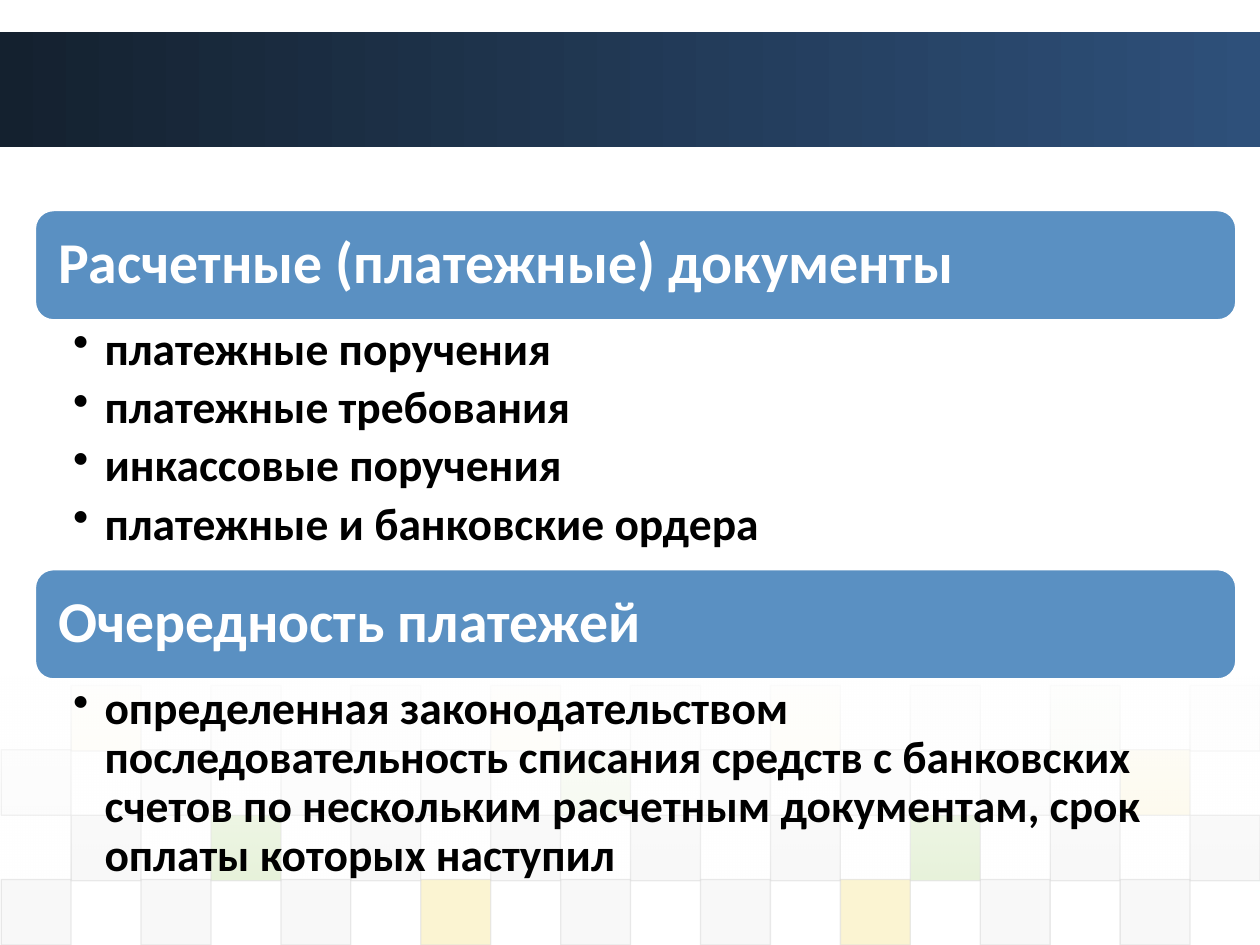
"""Build the slide on payment documents and the order of payments."""
from dataclasses import dataclass

from lxml import etree
from pptx import Presentation
from pptx.enum import shapes, text
from pptx.dml.color import RGBColor
from pptx.oxml import ns
from pptx.util import Inches, Pt

COLORS = {
    "navy": "14212F", "blue": "2E507A", "heading": "5A90C2",
    "white": "FFFFFF", "black": "000000",
    "gray": "DDDDDD", "pale": "EAEAEA", "green": "8AC246", "yellow": "EFC821",
}
TILE_CODES = {"D": "gray", "E": "pale", "G": "green", "Y": "yellow"}
FONT = "Calibri"
LEFT, WIDTH, HEADING_HEIGHT = 0.28, 9.53, 0.87
TILE_LEFT, TILE_PITCH = 0.01, 0.555


@dataclass
class TileRow:
    top: float
    first_column: int
    opacity: int
    codes: str


@dataclass
class Section:
    top: float
    body_height: float
    heading: str
    items: list[str]


@dataclass
class Stop:
    color: str
    opacity: int = 100


TILE_ROWS = [
    TileRow(5.44, 1, 5, "YEEYDYEGE"),
    TileRow(5.95, 0, 10, "DDDDGDDDY"),
    TileRow(6.47, 1, 20, "DGDDDDGDD"),
    TileRow(6.98, 0, 20, "DDDYDDYDD"),
]
SECTIONS = [
    Section(1.67, 1.98, "Расчетные (платежные) документы", [
        "платежные поручения",
        "платежные требования",
        "инкассовые поручения",
        "платежные и банковские ордера",
    ]),
    Section(4.52, 1.31, "Очередность платежей", [
        "определенная законодательством последовательность списания средств "
        "с банковских счетов по нескольким расчетным документам, "
        "срок оплаты которых наступил",
    ]),
]


def rgb(name: str) -> RGBColor:
    return RGBColor.from_string(COLORS[name])


def set_opacity(element, percent: int) -> None:
    for color in element.iter(ns.qn("a:srgbClr")):
        etree.SubElement(color, ns.qn("a:alpha"), val=str(percent * 1000))


def add_block(page, left: float, top: float, width: float, height: float,
              kind=shapes.MSO_SHAPE.RECTANGLE):
    box = page.shapes.add_shape(kind, Inches(left), Inches(top), Inches(width), Inches(height))
    box.shadow.inherit = False
    return box


def add_gradient(page, top: float, height: float, angle: int, stops: list[Stop]) -> None:
    box = add_block(page, 0, top, 10, height)
    box.line.fill.background()
    box.fill.gradient()
    box.fill.gradient_angle = angle
    for target, stop in zip(box.fill.gradient_stops, stops):
        target.color.rgb = rgb(stop.color)
        target.position = float(stops.index(stop))
    elements = box.element.spPr.iter(ns.qn("a:gs"))
    for element, stop in zip(elements, stops):
        set_opacity(element, stop.opacity)


def add_tiles(page, row: TileRow) -> None:
    for index, code in enumerate(row.codes):
        column = row.first_column + 2 * index
        tile = add_block(page, TILE_LEFT + TILE_PITCH * column, row.top, TILE_PITCH, 0.52)
        tile.fill.solid()
        tile.fill.fore_color.rgb = rgb(TILE_CODES[code])
        set_opacity(tile.element.spPr.find(ns.qn("a:solidFill")), row.opacity)
        tile.line.color.rgb = rgb("gray")
        tile.line.width = Pt(0.75)
        set_opacity(tile.element.spPr.find(ns.qn("a:ln")), 60)


def set_frame(frame, left: float, right: float, vertical: float, anchor) -> None:
    frame.word_wrap = True
    frame.margin_left, frame.margin_right = Inches(left), Inches(right)
    frame.margin_top = frame.margin_bottom = Inches(vertical)
    frame.vertical_anchor = anchor


def add_span(para, words: str, size: float, color: str) -> None:
    para.alignment = text.PP_ALIGN.LEFT
    para.line_spacing = 0.9
    span = para.add_run()
    span.text = words
    span.font.name, span.font.size, span.font.bold = FONT, Pt(size), True
    span.font.color.rgb = rgb(color)


def add_bullet(para) -> None:
    properties = para._p.get_or_add_pPr()
    properties.set("marL", str(Inches(0.25)))
    properties.set("indent", str(Inches(-0.25)))
    etree.SubElement(properties, ns.qn("a:buChar"), char="•")


def add_section(page, section: Section) -> None:
    bar = add_block(page, LEFT, section.top, WIDTH, HEADING_HEIGHT,
                    shapes.MSO_SHAPE.ROUNDED_RECTANGLE)
    bar.fill.solid()
    bar.fill.fore_color.rgb = rgb("heading")
    bar.line.color.rgb = rgb("white")
    bar.line.width = Pt(1)
    set_frame(bar.text_frame, 0.14, 0.14, 0.14, text.MSO_ANCHOR.MIDDLE)
    add_span(bar.text_frame.paragraphs[0], section.heading, 33, "white")

    box = page.shapes.add_textbox(Inches(LEFT), Inches(section.top + HEADING_HEIGHT),
                                  Inches(WIDTH), Inches(section.body_height))
    frame = box.text_frame
    set_frame(frame, 0.3, 0.26, 0.05, text.MSO_ANCHOR.TOP)
    for index, item in enumerate(section.items):
        para = frame.add_paragraph() if index else frame.paragraphs[0]
        add_bullet(para)
        para.space_after = Pt(5.2)
        add_span(para, item, 26, "black")


def main() -> None:
    deck = Presentation()
    deck.slide_width, deck.slide_height = Inches(10), Inches(7.5)
    page = deck.slides.add_slide(deck.slide_layouts[6])
    add_gradient(page, 0.25, 0.92, 0, [Stop("navy"), Stop("blue")])
    for row in TILE_ROWS:
        add_tiles(page, row)
    add_gradient(page, 5.37, 1.62, 270, [Stop("white", 90), Stop("white", 0)])
    for section in SECTIONS:
        add_section(page, section)
    deck.save("out.pptx")


if __name__ == "__main__":
    main()
